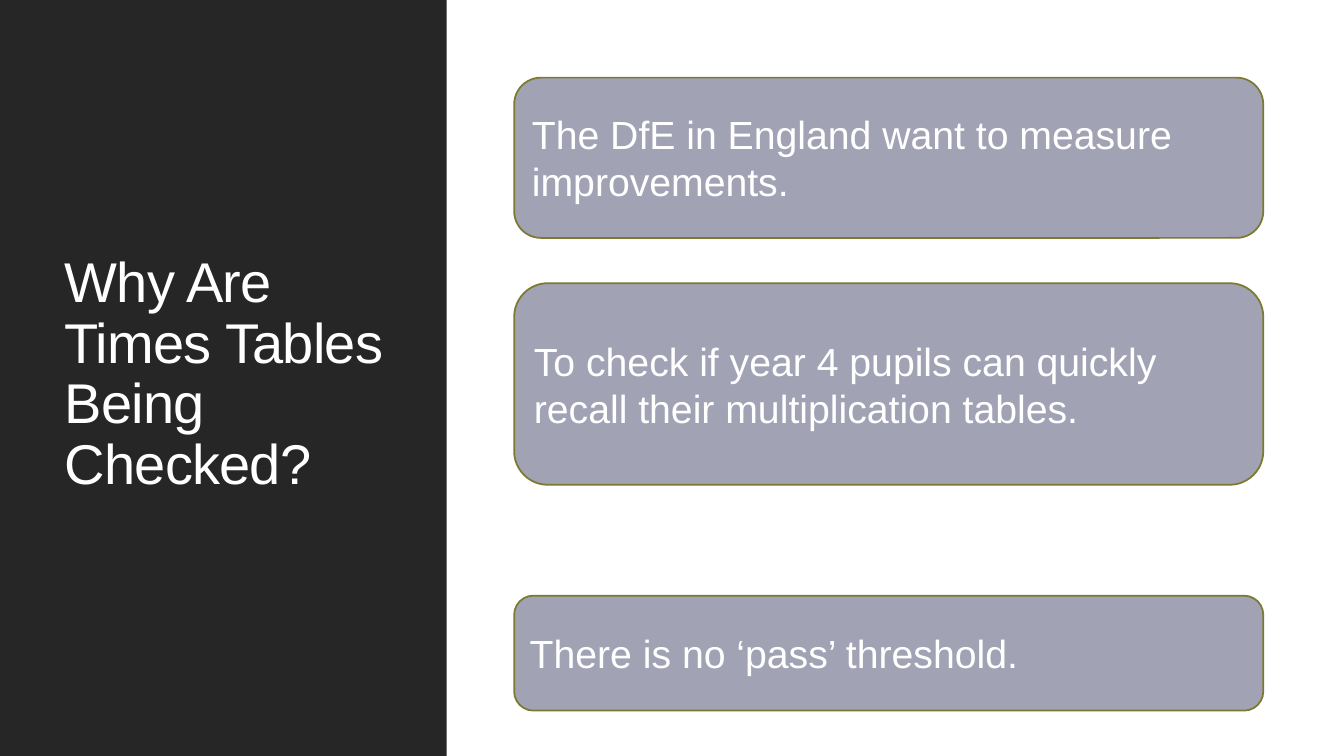
from pptx import Presentation
from pptx.dml.color import RGBColor
from pptx.enum.shapes import MSO_SHAPE
from pptx.enum.text import MSO_ANCHOR, MSO_AUTO_SIZE, PP_ALIGN
from pptx.util import Pt

RECTANGLE = MSO_SHAPE.RECTANGLE
ROUNDED = MSO_SHAPE.ROUNDED_RECTANGLE
MIDDLE = MSO_ANCHOR.MIDDLE
LEFT = PP_ALIGN.LEFT
NO_AUTOFIT = MSO_AUTO_SIZE.NONE

EMU_PER_PX = 9144
COLOURS = {"panel": "262626", "card": "A2A2B5", "border": "7C7930", "text": "FFFFFF"}
CARD_LEFT, CARD_WIDTH = 510, 743
REASONS = [
    (77, 159, "The DfE in England want to measure improvements."),
    (281, 200, "To check if year 4 pupils can quickly recall their multiplication tables."),
    (591, 114, "There is no ‘pass’ threshold."),
]


def px(length):
    return length * EMU_PER_PX


def colour(name):
    return RGBColor.from_string(COLOURS[name])


def write_text(shape, text, size, line_spacing=None, tracking=None):
    frame = shape.text_frame
    frame.word_wrap = True
    frame.auto_size = NO_AUTOFIT
    frame.vertical_anchor = MIDDLE
    paragraph = frame.paragraphs[0]
    paragraph.alignment = LEFT
    if line_spacing is not None:
        paragraph.line_spacing = line_spacing
    run = paragraph.add_run()
    run.text = text
    run.font.size = Pt(size)
    run.font.name = "Arial"
    run.font.color.rgb = colour("text")
    if tracking is not None:
        run.font._element.set("spc", str(tracking))


class SlideBuilder:
    """Holds the style and the current slide."""

    def __init__(self, presentation):
        self.title_size = 40
        self.card_size = 28
        self.slide = presentation.slides.add_slide(presentation.slide_layouts[5])

    def box(self, kind, left, top, width, height, fill, border=None):
        shape = self.slide.shapes.add_shape(kind, px(left), px(top), px(width), px(height))
        shape.shadow.inherit = False
        shape.fill.solid()
        shape.fill.fore_color.rgb = colour(fill)
        if border:
            shape.line.color.rgb = colour(border)
            shape.line.width = Pt(1.25)
        else:
            shape.line.fill.background()
        return shape

    def panel(self, width, height):
        panel = self.box(RECTANGLE, 0, 0, width, height, "panel")
        self.slide.shapes.title._element.addprevious(panel._element)

    def title(self, left, top, width, height, text):
        title = self.slide.shapes.title
        title.left, title.top = px(left), px(top)
        title.width, title.height = px(width), px(height)
        write_text(title, text, self.title_size, line_spacing=0.9, tracking=-50)

    def card(self, top, height, text):
        card = self.box(ROUNDED, CARD_LEFT, top, CARD_WIDTH, height, "card", "border")
        write_text(card, text, self.card_size)


def main():
    presentation = Presentation()
    presentation.slide_width, presentation.slide_height = px(1333), px(750)
    builder = SlideBuilder(presentation)
    builder.panel(443, 750)
    builder.title(54, 57, 337, 631, "Why Are Times Tables Being Checked?")
    for top, height, text in REASONS:
        builder.card(top, height, text)
    presentation.save("out.pptx")


if __name__ == "__main__":
    main()
